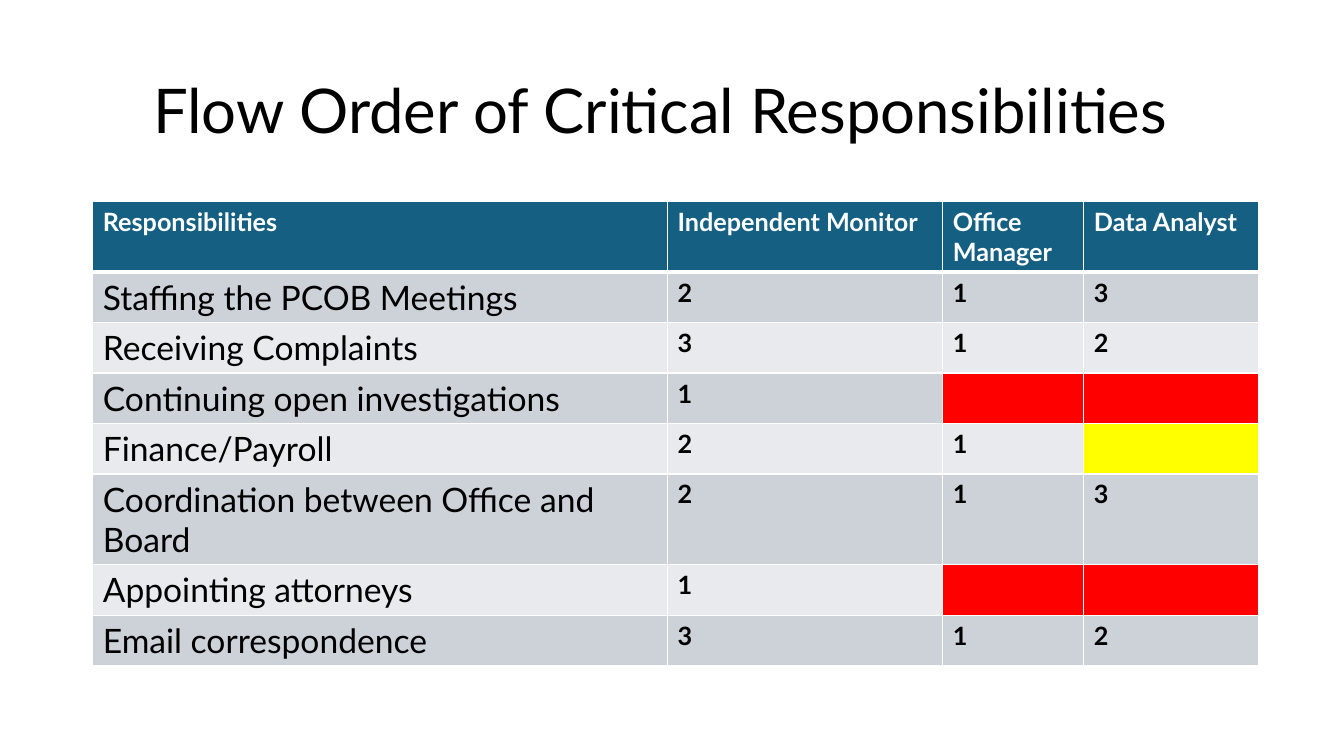
from lxml.etree import SubElement
from pptx import Presentation
from pptx.dml.color import RGBColor
from pptx.enum.text import MSO_ANCHOR as Anchor
from pptx.oxml.ns import qn
from pptx.util import Inches, Pt

FONT = "Lato"
BLACK = RGBColor(0x00, 0x00, 0x00)
WHITE = RGBColor(0xFF, 0xFF, 0xFF)
TEAL = RGBColor(0x15, 0x60, 0x82)
BANDS = [RGBColor(0xE8, 0xEA, 0xED), RGBColor(0xCC, 0xD2, 0xD8)]
RED = RGBColor(0xFF, 0x00, 0x00)
YELLOW = RGBColor(0xFF, 0xFF, 0x00)

WIDTHS = [5.7, 2.73, 1.4, 1.73]
HEAD_H, ROW_H, TALL_H = 0.69, 0.5, 0.9
TALL_ROW = 5

# A colour in place of a number marks a role without that duty
ROWS = [
    ("Responsibilities", "Independent Monitor", "Office Manager", "Data Analyst"),
    ("Staffing the PCOB Meetings", "2", "1", "3"),
    ("Receiving Complaints", "3", "1", "2"),
    ("Continuing open investigations", "1", RED, RED),
    ("Finance/Payroll", "2", "1", YELLOW),
    ("Coordination between Office and Board", "2", "1", "3"),
    ("Appointing attorneys", "1", RED, RED),
    ("Email correspondence", "3", "1", "2"),
]


def set_font(para, size, color, bold=False):
    font = para.font
    font.name, font.size, font.bold = FONT, Pt(size), bold
    font.color.rgb = color


def add_title(slide, left, top, width, height):
    box = slide.shapes.add_textbox(
        Inches(left), Inches(top), Inches(width), Inches(height))
    frame = box.text_frame
    frame.word_wrap = True
    frame.vertical_anchor = Anchor.MIDDLE
    para = frame.paragraphs[0]
    para.text = "\tFlow Order of Critical Responsibilities"
    para.line_spacing = 0.9
    set_font(para, 44, BLACK)


def add_edges(cell, top, bottom):
    props = cell._tc.get_or_add_tcPr()
    for side, width in (("L", 1), ("R", 1), ("T", top), ("B", bottom)):
        line = SubElement(props, qn(f"a:ln{side}"), w=str(Pt(width)))
        fill = SubElement(line, qn("a:solidFill"))
        SubElement(fill, qn("a:srgbClr"), val=str(WHITE))


def fill_cell(cell, value, row, col):
    head = row == 0
    # Edges come before the fill in the cell's XML
    add_edges(cell, 3 if row == 1 else 1, 3 if head else 1)
    cell.fill.solid()
    if isinstance(value, RGBColor):
        cell.fill.fore_color.rgb = value
        return
    cell.fill.fore_color.rgb = TEAL if head else BANDS[row % 2]
    para = cell.text_frame.paragraphs[0]
    para.text = value
    duty = col == 0 and not head
    set_font(para, 24 if duty else 18, WHITE if head else BLACK, not duty)


def add_duties(slide, left, top, width):
    heights = [HEAD_H] + [ROW_H] * (len(ROWS) - 1)
    heights[TALL_ROW] = TALL_H
    table = slide.shapes.add_table(
        len(ROWS), len(WIDTHS), Inches(left), Inches(top),
        Inches(width), Inches(sum(heights))).table
    scale = width / sum(WIDTHS)
    for column, size in zip(table.columns, WIDTHS):
        column.width = Inches(size * scale)
    for r, (values, size) in enumerate(zip(ROWS, heights)):
        table.rows[r].height = Inches(size)
        for c, value in enumerate(values):
            fill_cell(table.cell(r, c), value, r, c)


def main():
    deck = Presentation()
    deck.slide_width, deck.slide_height = Inches(13.33), Inches(7.5)
    slide = deck.slides.add_slide(deck.slide_layouts[6])
    add_title(slide, 0.92, 0.4, 11.62, 1.45)
    add_duties(slide, 0.92, 2, 11.56)
    deck.save("out.pptx")


if __name__ == "__main__":
    main()
